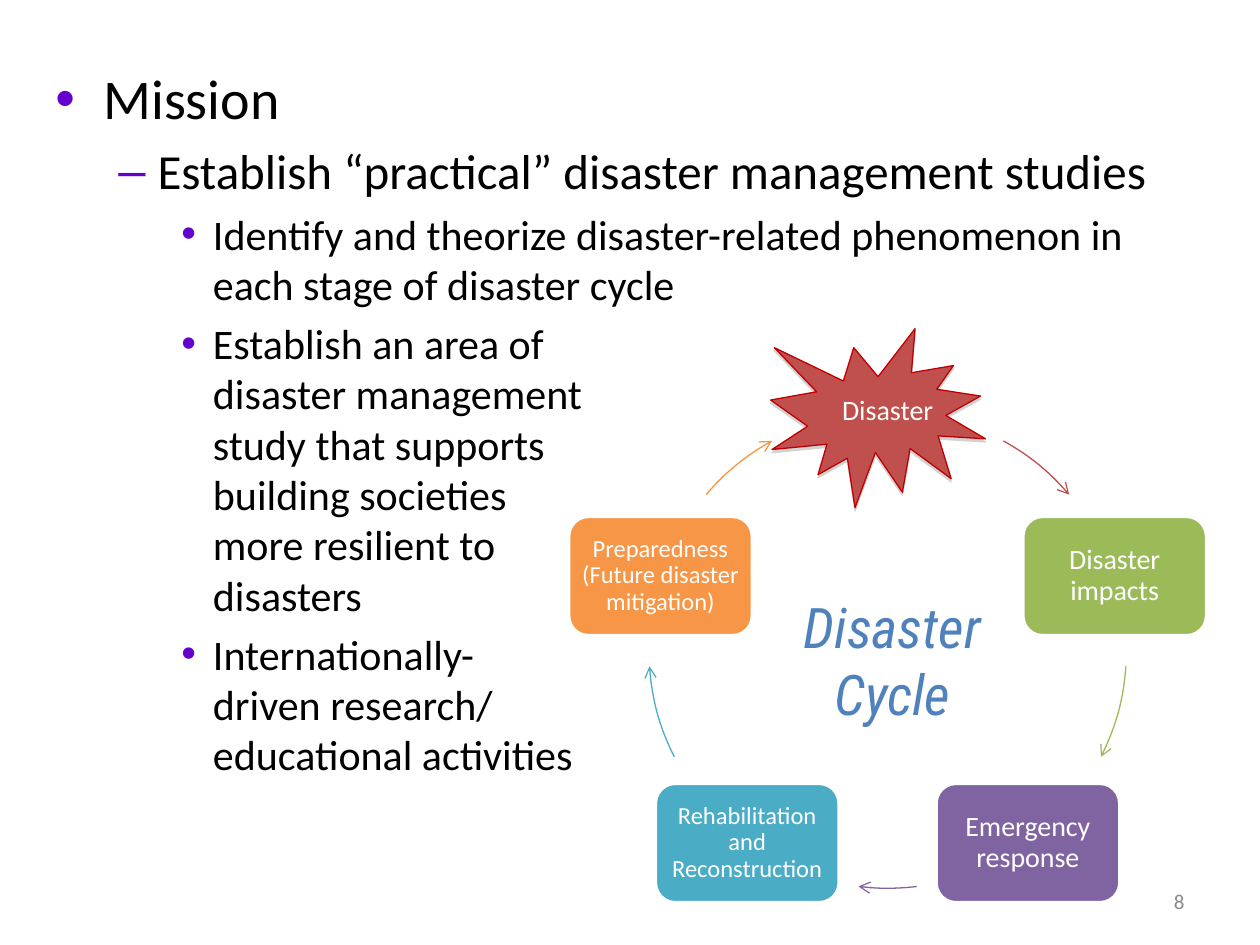
from dataclasses import dataclass
from math import cos, radians, sin

from lxml.etree import SubElement
from pptx import Presentation
from pptx.dml.color import RGBColor as Rgb
from pptx.enum.shapes import MSO_SHAPE as Kind
from pptx.enum.text import MSO_ANCHOR as Anchor, MSO_AUTO_SIZE as Fit, PP_ALIGN as Align
from pptx.oxml.ns import qn
from pptx.util import Inches, Pt


@dataclass(frozen=True)
class Theme:
    """Colours, fonts and type sizes of the slide."""
    face: str = "Calibri"
    slim: str = "Roboto Condensed"
    ink: str = "000000"
    pale: str = "FFFFFF"
    gray: str = "898989"
    mark: str = "6600CC"
    hub: str = "4F81BD"
    burst: str = "C0504D"
    edge: str = "C00000"
    shade: str = "808080"
    big: int = 32
    levels: tuple = (32, 28, 24)
    node: int = 16
    small: int = 14
    foot: int = 12


THEME = Theme()
WIDE, HIGH = Inches(10), Inches(7.5)
INDENTS = ((0.38, -0.38, "•"), (0.81, -0.31, "–"), (1.25, -0.25, "•"))
POINTS = (
    (0, "Mission"),
    (1, "Establish “practical” disaster management studies"),
    (2, "Identify and theorize disaster-related phenomenon in each stage of disaster cycle"),
    (2, "Establish an area of \ndisaster management \nstudy that supports \n"
        "building societies \nmore resilient to \ndisasters"),
    (2, "Internationally-\ndriven research/\neducational activities"),
)
STAGES = (
    ("Disaster impacts", "9BBB59", THEME.node, 0.07),
    ("Emergency response", "8064A2", THEME.node, 0.07),
    ("Rehabilitation and Reconstruction", "4BACC6", THEME.small, 0.06),
    ("Preparedness\n(Future disaster mitigation)", "F79646", THEME.small, 0.06),
)
ARCS = ((299, 319.5), (4, 26.7), (83, 97), (153.3, 176), (220.5, 241))


def area(left, top, wide, high):
    """Turn shares of the slide into a box."""
    return int(left * WIDE), int(top * HIGH), int(wide * WIDE), int(high * HIGH)


def spot(ring, x, y, wide, high):
    """Return a box centred at a point, all in shares of the ring."""
    left, top, span, _ = ring
    return (int(left + (x - wide / 2) * span), int(top + (y - high / 2) * span),
            int(wide * span), int(high * span))


def write(para, text, size, color, face=THEME.face, slant=None):
    """Add text to a paragraph run by run, with line breaks."""
    for row, line in enumerate(text.split("\n")):
        if row:
            para.add_line_break()
        run = para.add_run()
        run.text = line
        font = run.font
        font.size, font.name, font.italic = Pt(size), face, slant
        font.color.rgb = Rgb.from_string(color)


def label(shape, text, size, color=THEME.pale, pad=None, align=Align.CENTER, **look):
    """Write one aligned paragraph in the middle of a shape."""
    frame = shape.text_frame
    frame.word_wrap, frame.vertical_anchor = True, Anchor.MIDDLE
    para = frame.paragraphs[0]
    para.alignment = align
    if pad is not None:
        frame.margin_left = frame.margin_right = Inches(pad)
        frame.margin_top = frame.margin_bottom = Inches(pad)
        para.line_spacing = 0.9
    write(para, text, size, color, **look)


def solid(slide, kind, box, fill, line, width):
    """Add a flat filled shape."""
    shape = slide.shapes.add_shape(kind, *box)
    shape.shadow.inherit = False
    shape.fill.solid()
    shape.fill.fore_color.rgb = Rgb.from_string(fill)
    shape.line.color.rgb = Rgb.from_string(line)
    shape.line.width = Pt(width)
    return shape


def bullet(para, level):
    """Set the indent and the coloured bullet of a level."""
    left, first, sign = INDENTS[level]
    para.level = level
    props = para._p.get_or_add_pPr()
    props.set("marL", str(Inches(left)))
    props.set("indent", str(Inches(first)))
    SubElement(SubElement(props, qn("a:buClr")), qn("a:srgbClr"), val=THEME.mark)
    SubElement(props, qn("a:buFont"), typeface="Arial")
    SubElement(props, qn("a:buChar"), char=sign)


def points(slide, box):
    """Fill the body placeholder with the outline."""
    body = slide.placeholders[1]
    body.left, body.top, body.width, body.height = box
    frame = body.text_frame
    frame.auto_size, frame.word_wrap = Fit.NONE, True
    for row, (level, text) in enumerate(POINTS):
        para = frame.add_paragraph() if row else frame.paragraphs[0]
        if not row:
            para.space_before = Pt(0)
        bullet(para, level)
        write(para, text, THEME.levels[level], THEME.ink)


def arrow(slide, ring, start, end, color):
    """Draw an arc of the ring with an arrowhead at its end."""
    arc = slide.shapes.add_shape(Kind.ARC, *ring)
    arc.shadow.inherit = False
    arc.adjustments[0], arc.adjustments[1] = start * 0.6, end * 0.6
    arc.fill.background()
    arc.line.color.rgb = Rgb.from_string(color)
    arc.line.width = Pt(0.75)
    SubElement(arc.line._get_or_add_ln(), qn("a:tailEnd"), type="arrow")


def burst(slide, ring):
    """Draw the star of the disaster with its shadow and label."""
    star = solid(slide, Kind.EXPLOSION1, spot(ring, 0.48, 0.015, 0.45, 0.375),
                 THEME.burst, THEME.edge, 0.75)
    glow = SubElement(star._element.spPr.find(qn("a:effectLst")), qn("a:outerShdw"),
                      blurRad="0", dist=str(Pt(1.8)), dir="5400000", rotWithShape="0")
    tone = SubElement(glow, qn("a:srgbClr"), val=THEME.shade)
    SubElement(tone, qn("a:alpha"), val="35000")
    name = slide.shapes.add_textbox(*spot(ring, 0.5, 0, 0.36, 0.23))
    label(name, "Disaster", THEME.node, pad=0.07)


def cycle(slide, ring):
    """Set the stages and arrows round the ring, with the name inside."""
    burst(slide, ring)
    arrow(slide, ring, *ARCS[0], THEME.burst)
    for step, (text, color, size, pad) in enumerate(STAGES, 1):
        turn = radians(72 * step - 90)
        box = spot(ring, 0.5 + cos(turn) / 2, 0.5 + sin(turn) / 2, 0.385, 0.25)
        node = solid(slide, Kind.ROUNDED_RECTANGLE, box, color, THEME.pale, 2)
        label(node, text, size, pad=pad)
        arrow(slide, ring, *ARCS[step], color)
    name = slide.shapes.add_textbox(*spot(ring, 0.51, 0.52, 0.456, 0.31))
    label(name, "Disaster Cycle", THEME.big, THEME.hub, face=THEME.slim, slant=True)


def footer(slide, box):
    """Write the slide number at the right."""
    label(slide.shapes.add_textbox(*box), "8", THEME.foot, THEME.gray, align=Align.RIGHT)


def main():
    """Build and save the slide."""
    deck = Presentation()
    deck.slide_width, deck.slide_height = WIDE, HIGH
    slide = deck.slides.add_slide(deck.slide_layouts[1])
    title = slide.shapes.title._element
    title.getparent().remove(title)
    points(slide, area(0.034, 0.061, 0.9, 0.795))
    footer(slide, area(0.717, 0.927, 0.233, 0.053))
    cycle(slide, area(0.515, 0.435, 0.379, 0.505))
    deck.save("out.pptx")


if __name__ == "__main__":
    main()
